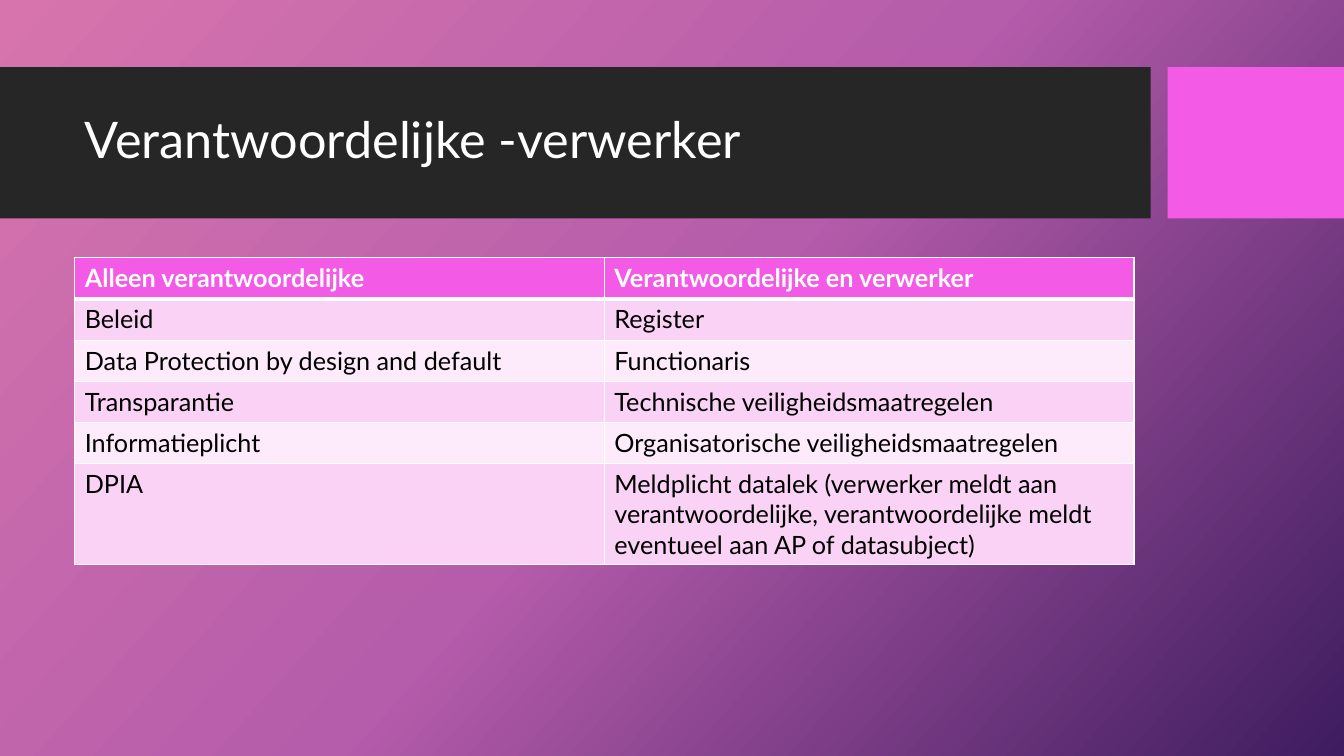
"""Build the slide that compares duties of controllers and processors."""
import copy
from typing import NamedTuple

import lxml.etree
import pptx
import pptx.dml.color
import pptx.dml.fill
import pptx.enum.shapes
import pptx.enum.text
import pptx.oxml.ns
import pptx.slide
import pptx.table
import pptx.text.text
import pptx.util

UNIT = pptx.util.Inches(1) / 12
COLUMNS, ROWS = 160, 90
FONT = "Lato"
WHITE, BLACK, PINK = "FFFFFF", "000000", "F35AE6"
BANDS = ("FAD2F5", "FDEAFA")
GRADIENT = ((0, "D774AD"), (0.5, "B55CAB"), (1, "3E1C5F"))
GRADIENT_ANGLE = 42


class Area(NamedTuple):
    left: float
    top: float
    width: float
    height: float


class Block(NamedTuple):
    area: Area
    fill: str


class Duties(NamedTuple):
    controller: str
    both: str
    height: float = 4.9


BLOCKS = (
    Block(Area(0, 8, 137, 18), "262626"),
    Block(Area(139, 8, 21, 18), PINK),
)
TITLE_AREA = Area(8.9, 9.8, 126.1, 14.2)
TABLE_AREA = Area(8.9, 30.7, 126.1, 36.2)
DUTIES = (
    Duties("Alleen verantwoordelijke", "Verantwoordelijke en verwerker"),
    Duties("Beleid", "Register"),
    Duties("Data Protection by design and default", "Functionaris"),
    Duties("Transparantie", "Technische veiligheidsmaatregelen"),
    Duties("Informatieplicht", "Organisatorische veiligheidsmaatregelen"),
    Duties(
        "DPIA",
        "Meldplicht datalek (verwerker meldt aan verantwoordelijke, "
        "verantwoordelijke meldt eventueel aan AP of datasubject)",
        11.7,
    ),
)


def grid(units: float) -> pptx.util.Emu:
    return pptx.util.Emu(round(units * UNIT))


def place(area: Area) -> list[pptx.util.Emu]:
    return [grid(units) for units in area]


def color(value: str) -> pptx.dml.color.RGBColor:
    return pptx.dml.color.RGBColor.from_string(value)


def paint(fill: pptx.dml.fill.FillFormat, value: str) -> None:
    fill.solid()
    fill.fore_color.rgb = color(value)


def write(frame: pptx.text.text.TextFrame, text: str, size: float, ink: str, bold: bool = False) -> None:
    frame.text = text
    font = frame.paragraphs[0].font
    font.name, font.size, font.bold = FONT, pptx.util.Pt(size), bold
    font.color.rgb = color(ink)


def paint_background(page: pptx.slide.Slide) -> None:
    fill = page.background.fill
    fill.gradient()
    fill.gradient_angle = 360 - GRADIENT_ANGLE
    first = page.element.find(".//" + pptx.oxml.ns.qn("a:gs"))
    first.addnext(copy.deepcopy(first))
    for stop, (position, value) in zip(fill.gradient_stops, GRADIENT):
        stop.position = position
        stop.color.rgb = color(value)


def draw_block(page: pptx.slide.Slide, block: Block) -> None:
    shape = page.shapes.add_shape(pptx.enum.shapes.MSO_SHAPE.RECTANGLE, *place(block.area))
    shape.shadow.inherit = False
    paint(shape.fill, block.fill)
    shape.line.fill.background()


def draw_title(page: pptx.slide.Slide, text: str) -> None:
    frame = page.shapes.add_textbox(*place(TITLE_AREA)).text_frame
    frame.word_wrap = True
    frame.vertical_anchor = pptx.enum.text.MSO_ANCHOR.MIDDLE
    write(frame, text, 36, WHITE)
    frame.paragraphs[0].line_spacing = 0.9


def draw_borders(cell: pptx.table._Cell, widths: dict[str, float]) -> None:
    properties = cell._tc.get_or_add_tcPr()
    for index, (side, width) in enumerate(widths.items()):
        line = lxml.etree.Element(pptx.oxml.ns.qn(f"a:ln{side}"), w=str(pptx.util.Pt(width)))
        solid = lxml.etree.SubElement(line, pptx.oxml.ns.qn("a:solidFill"))
        lxml.etree.SubElement(solid, pptx.oxml.ns.qn("a:srgbClr"), val=WHITE)
        properties.insert(index, line)


def draw_table(page: pptx.slide.Slide) -> None:
    table = page.shapes.add_table(len(DUTIES), 2, *place(TABLE_AREA)).table
    for row, duties in enumerate(DUTIES):
        table.rows[row].height = grid(duties.height)
        header = row == 0
        fill = PINK if header else BANDS[(row - 1) % 2]
        widths = {"L": 1, "R": 1, "T": 3 if row == 1 else 1, "B": 3 if header else 1}
        for column, text in enumerate((duties.controller, duties.both)):
            cell = table.cell(row, column)
            write(cell.text_frame, text, 18, WHITE if header else BLACK, header)
            paint(cell.fill, fill)
            draw_borders(cell, widths)


def main() -> None:
    deck = pptx.Presentation()
    deck.slide_width, deck.slide_height = grid(COLUMNS), grid(ROWS)
    page = deck.slides.add_slide(deck.slide_layouts[6])
    paint_background(page)
    for block in BLOCKS:
        draw_block(page, block)
    draw_title(page, "Verantwoordelijke -verwerker")
    draw_table(page)
    deck.save("out.pptx")


if __name__ == "__main__":
    main()
